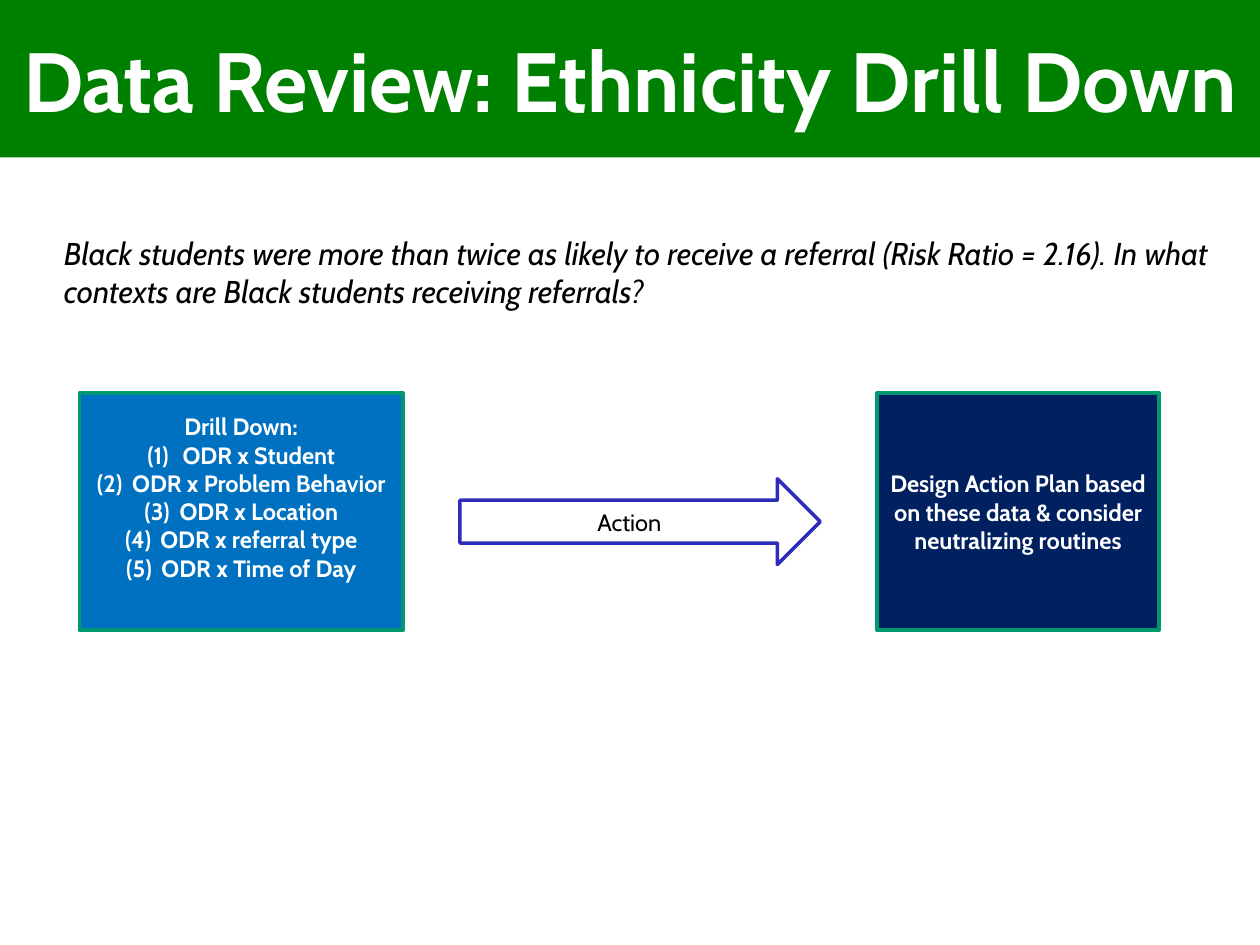
from pptx import Presentation
from pptx.dml.color import RGBColor
from pptx.enum.shapes import MSO_SHAPE
from pptx.enum.text import MSO_ANCHOR, PP_ALIGN
from pptx.oxml.ns import qn
from pptx.util import Inches, Pt
from lxml.etree import SubElement

FONT = "Cabin"
COLORS = {
    "green": "008000", "teal": "009771", "blue": "0070C0", "navy": "002060",
    "violet": "2D2DB9", "white": "FFFFFF", "black": "000000",
}
TITLE = "Data Review: Ethnicity Drill Down"
QUESTION = (
    "Black students were more than twice as likely to receive a referral "
    "(Risk Ratio = 2.16). In what contexts are Black students receiving referrals?"
)
HEAD = "Drill Down:"
DRILLS = [
    "ODR x Student", "ODR x Problem Behavior", "ODR x Location",
    "ODR x referral type", "ODR x Time of Day",
]
PLAN = "Design Action Plan based on these data & consider neutralizing routines"
BOX_TOP, BOX_HIGH = 3.12, 1.88
ARROW_HIGH = 0.68
ARROW_TOP = BOX_TOP + (BOX_HIGH - ARROW_HIGH) / 2 + 0.08


def color(name):
    return RGBColor.from_string(COLORS[name])


def place(shape, left, top, width, height):
    shape.left, shape.top = Inches(left), Inches(top)
    shape.width, shape.height = Inches(width), Inches(height)


def write(par, text, size, tint, bold=False, italic=False, align=PP_ALIGN.CENTER):
    par.alignment = align
    run = par.add_run()
    run.text = text
    font = run.font
    font.name, font.size = FONT, Pt(size)
    font.bold, font.italic = bold, italic
    font.color.rgb = color(tint)


def number(par):
    """Give the paragraph a hanging (1), (2), ... label."""
    props = par._p.get_or_add_pPr()
    props.set("marL", str(Inches(0.28)))
    props.set("indent", str(-Inches(0.28)))
    SubElement(props, qn("a:buFont")).set("typeface", FONT)
    SubElement(props, qn("a:buAutoNum")).set("type", "arabicParenBoth")


def add_box(slide, kind, spot, fill, line):
    box = slide.shapes.add_shape(kind, *map(Inches, spot))
    box.shadow.inherit = False
    box.fill.solid()
    box.fill.fore_color.rgb = color(fill)
    box.line.color.rgb = color(line)
    box.line.width = Pt(2)
    frame = box.text_frame
    frame.word_wrap = True
    frame.vertical_anchor = MSO_ANCHOR.MIDDLE
    return frame


def main():
    deck = Presentation()
    deck.slide_width, deck.slide_height = Inches(10), Inches(7.5)
    slide = deck.slides.add_slide(deck.slide_layouts[5])

    title = slide.shapes.title
    place(title, 0, 0, 10, 1.25)
    title.fill.solid()
    title.fill.fore_color.rgb = color("green")
    title.text_frame.vertical_anchor = MSO_ANCHOR.MIDDLE
    write(title.text_frame.paragraphs[0], TITLE, 48, "white", bold=True)

    drill = add_box(slide, MSO_SHAPE.RECTANGLE,
                    (0.63, BOX_TOP, 2.57, BOX_HIGH), "blue", "teal")
    drill.margin_bottom = Inches(0.28)
    write(drill.paragraphs[0], HEAD, 13.5, "white", bold=True)
    for item in DRILLS:
        par = drill.add_paragraph()
        number(par)
        write(par, item, 13.5, "white", bold=True)

    plan = add_box(slide, MSO_SHAPE.RECTANGLE,
                   (6.96, BOX_TOP, 2.24, BOX_HIGH), "navy", "teal")
    write(plan.paragraphs[0], PLAN, 13.5, "white", bold=True)

    arrow = add_box(slide, MSO_SHAPE.RIGHT_ARROW,
                    (3.65, ARROW_TOP, 2.86, ARROW_HIGH), "white", "violet")
    write(arrow.paragraphs[0], "Action", 13.5, "black")

    note = slide.shapes.add_textbox(*map(Inches, (0.41, 1.81, 9.3, 0.71)))
    note.text_frame.word_wrap = True
    write(note.text_frame.paragraphs[0], QUESTION, 18, "black",
          italic=True, align=PP_ALIGN.LEFT)

    deck.save("out.pptx")


if __name__ == "__main__":
    main()
